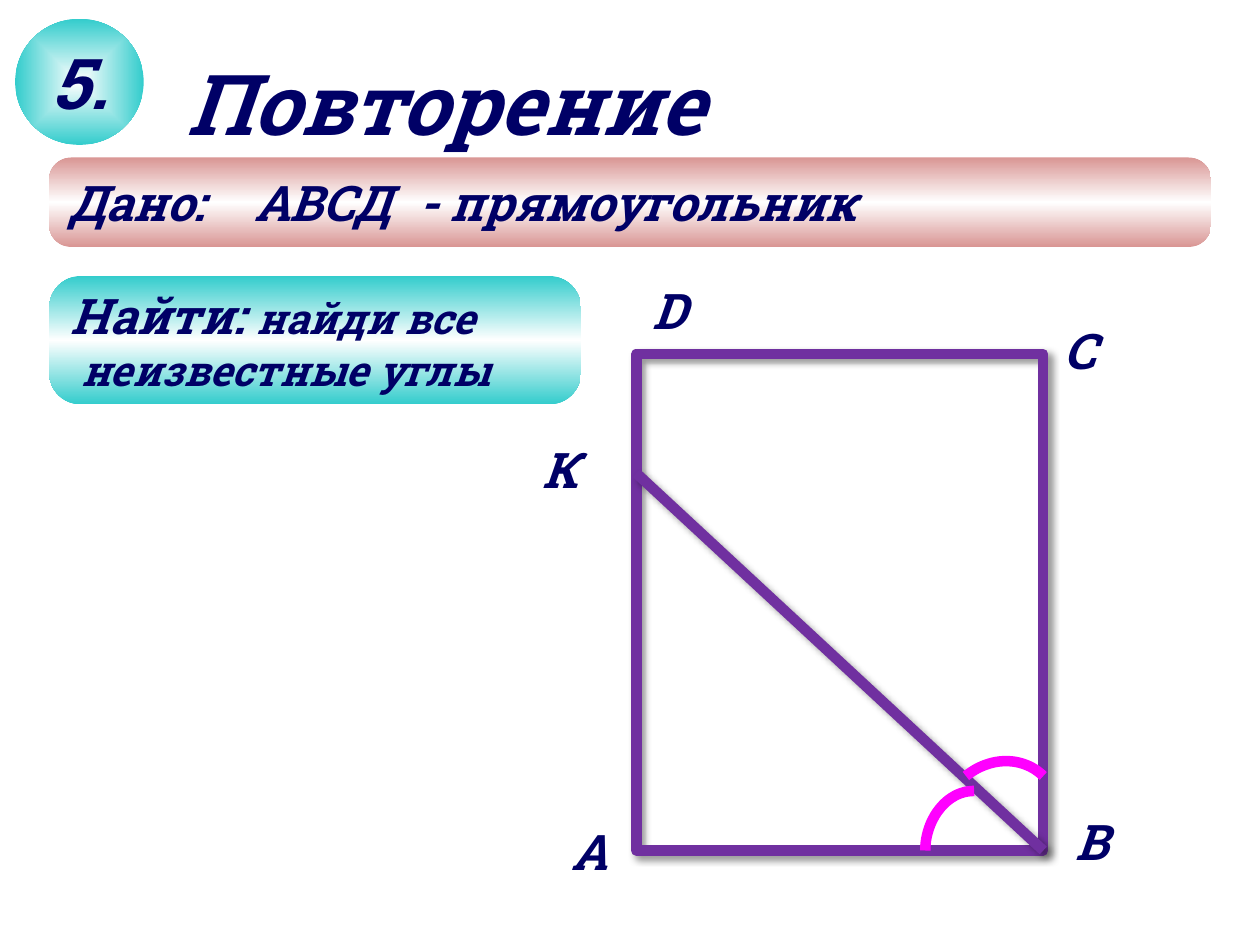
from pptx import Presentation
from pptx.dml.color import RGBColor
from pptx.enum.shapes import MSO_CONNECTOR, MSO_SHAPE
from pptx.enum.text import MSO_ANCHOR, MSO_AUTO_SIZE, PP_ALIGN
from pptx.oxml import parse_xml
from pptx.oxml.ns import qn
from pptx.util import Inches, Pt
from lxml.etree import SubElement

FONT = "Roboto Slab"
NAVY, PURPLE, PINK = "000066", "7030A0", "FF00FF"
TEAL, ROSE, WHITE = "33CCCC", "D99694", "FFFFFF"
SPACE = "http://schemas.openxmlformats.org/drawingml/2006/main"


def color(code):
    return RGBColor.from_string(code)


def inch(*sizes):
    return [Inches(size) for size in sizes]


def point(box, x, y):
    left, top, width, height = box
    return inch(left + x * width, top + y * height)


def style(run, size):
    font = run.font
    font.name, font.size = FONT, Pt(size)
    font.bold = font.italic = True
    font.color.rgb = color(NAVY)


def stroke(shape, code):
    shape.line.color.rgb = color(code)
    shape.line.width = Pt(6)


def shade(shape, stops, course):
    marks = "".join(
        f'<a:gs pos="{spot * 1000}"><a:srgbClr val="{code}"/></a:gs>'
        for spot, code in stops)
    fill = parse_xml(f'<a:gradFill xmlns:a="{SPACE}" rotWithShape="1">'
                     f'<a:gsLst>{marks}</a:gsLst>{course}</a:gradFill>')
    shape.fill.background()
    props = shape._element.spPr
    props.replace(props.find(qn("a:noFill")), fill)
    shape.line.fill.background()
    shape.shadow.inherit = False


def shadow(shape):
    props = shape._element.spPr
    group = props.find(qn("a:effectLst"))
    if group is None:
        group = SubElement(props, qn("a:effectLst"))
    cast = SubElement(group, qn("a:outerShdw"), blurRad=str(Pt(4)),
                      dist=str(Pt(3)), dir="2700000", algn="tl", rotWithShape="0")
    tint = SubElement(cast, qn("a:srgbClr"), val="000000")
    SubElement(tint, qn("a:alpha"), val="40000")


def tabs(line, stops):
    group = SubElement(line._p.get_or_add_pPr(), qn("a:tabLst"))
    for stop in stops:
        SubElement(group, qn("a:tab"), pos=str(Inches(stop)), algn="l")


def banner(slide, box, code):
    shape = slide.shapes.add_shape(MSO_SHAPE.ROUNDED_RECTANGLE, *inch(*box))
    shape.adjustments[0] = 0.25
    shade(shape, [(0, code), (50, WHITE), (100, code)],
          '<a:lin ang="5400000" scaled="1"/>')
    frame = shape.text_frame
    frame.word_wrap = True
    frame.vertical_anchor = MSO_ANCHOR.MIDDLE
    frame.paragraphs[0].alignment = PP_ALIGN.LEFT
    return frame


def given(slide, box):
    frame = banner(slide, box, ROSE)
    line = frame.paragraphs[0]
    line.text = "Дано:\tАВСД\t- прямоугольник"
    tabs(line, (1.48, 2.78))
    for run in line.runs:
        style(run, 28)


def task(slide, box):
    frame = banner(slide, box, TEAL)
    first, second = frame.paragraphs[0], frame.add_paragraph()
    first.text = "Найти: "
    first.add_run().text = "найди все"
    second.text = "неизвестные углы"
    second.alignment = PP_ALIGN.LEFT
    second._p.get_or_add_pPr().set("marL", str(Inches(0.08)))
    for run, size in zip(first.runs + second.runs, (28, 24, 24)):
        style(run, size)


def badge(slide, box):
    shape = slide.shapes.add_shape(MSO_SHAPE.OVAL, *inch(*box))
    shade(shape, [(0, WHITE), (100, TEAL)],
          '<a:path path="shape"><a:fillToRect l="50000" t="50000" '
          'r="50000" b="50000"/></a:path>')
    frame = shape.text_frame
    frame.word_wrap = False
    frame.vertical_anchor = MSO_ANCHOR.MIDDLE
    frame.text = "5."
    frame.paragraphs[0].alignment = PP_ALIGN.CENTER
    style(frame.paragraphs[0].runs[0], 40)


def heading(slide, box):
    title = slide.shapes.title
    title.left, title.top, title.width, title.height = inch(*box)
    frame = title.text_frame
    frame.text = "Повторение"
    frame.auto_size = MSO_AUTO_SIZE.NONE
    frame.vertical_anchor = MSO_ANCHOR.TOP
    frame.paragraphs[0].alignment = PP_ALIGN.LEFT
    style(frame.paragraphs[0].runs[0], 48)


def label(slide, spot, text):
    shape = slide.shapes.add_textbox(*spot, *inch(0.5, 0.57))
    frame = shape.text_frame
    frame.word_wrap = False
    frame.text = text
    style(frame.paragraphs[0].runs[0], 28)


def curve(slide, box, knots, steps=24):
    dots = []
    for step in range(steps + 1):
        t = step / steps
        parts = ((1 - t) ** 3, 3 * t * (1 - t) ** 2, 3 * t * t * (1 - t), t ** 3)
        x, y = (sum(p * knot[axis] for p, knot in zip(parts, knots))
                for axis in (0, 1))
        dots.append(point(box, x, y))
    draft = slide.shapes.build_freeform(*dots[0])
    draft.add_line_segments(dots[1:], close=False)
    shape = draft.convert_to_shape()
    shape.fill.background()
    stroke(shape, PINK)
    shape.shadow.inherit = False


def figure(slide, box):
    frame = slide.shapes.add_shape(MSO_SHAPE.RECTANGLE, *inch(*box))
    frame.fill.background()
    stroke(frame, PURPLE)
    frame.shadow.inherit = False
    shadow(frame)
    ray = slide.shapes.add_connector(
        MSO_CONNECTOR.STRAIGHT, *point(box, 1, 1), *point(box, 0, 0.24))
    stroke(ray, PURPLE)
    shadow(ray)
    curve(slide, box, [(0.71, 1), (0.71, 0.94), (0.76, 0.88), (0.83, 0.88)])
    curve(slide, box, [(0.81, 0.85), (0.87, 0.81), (0.95, 0.81), (1, 0.85)])
    for text, x, y in [("D", 0.01, -0.16), ("С", 1.02, -0.08), ("В", 1.05, 0.91),
                       ("А", -0.19, 0.93), ("К", -0.26, 0.16)]:
        label(slide, point(box, x, y), text)


def main():
    deck = Presentation()
    deck.slide_width, deck.slide_height = inch(10, 7.5)
    slide = deck.slides.add_slide(deck.slide_layouts[5])
    figure(slide, (5.05, 2.81, 3.23, 3.94))
    given(slide, (0.39, 1.25, 9.22, 0.71))
    task(slide, (0.39, 2.19, 4.22, 1.02))
    badge(slide, (0.12, 0.15, 1.02, 1))
    heading(slide, (1.38, 0.36, 4.72, 0.91))
    deck.save("out.pptx")


if __name__ == "__main__":
    main()
